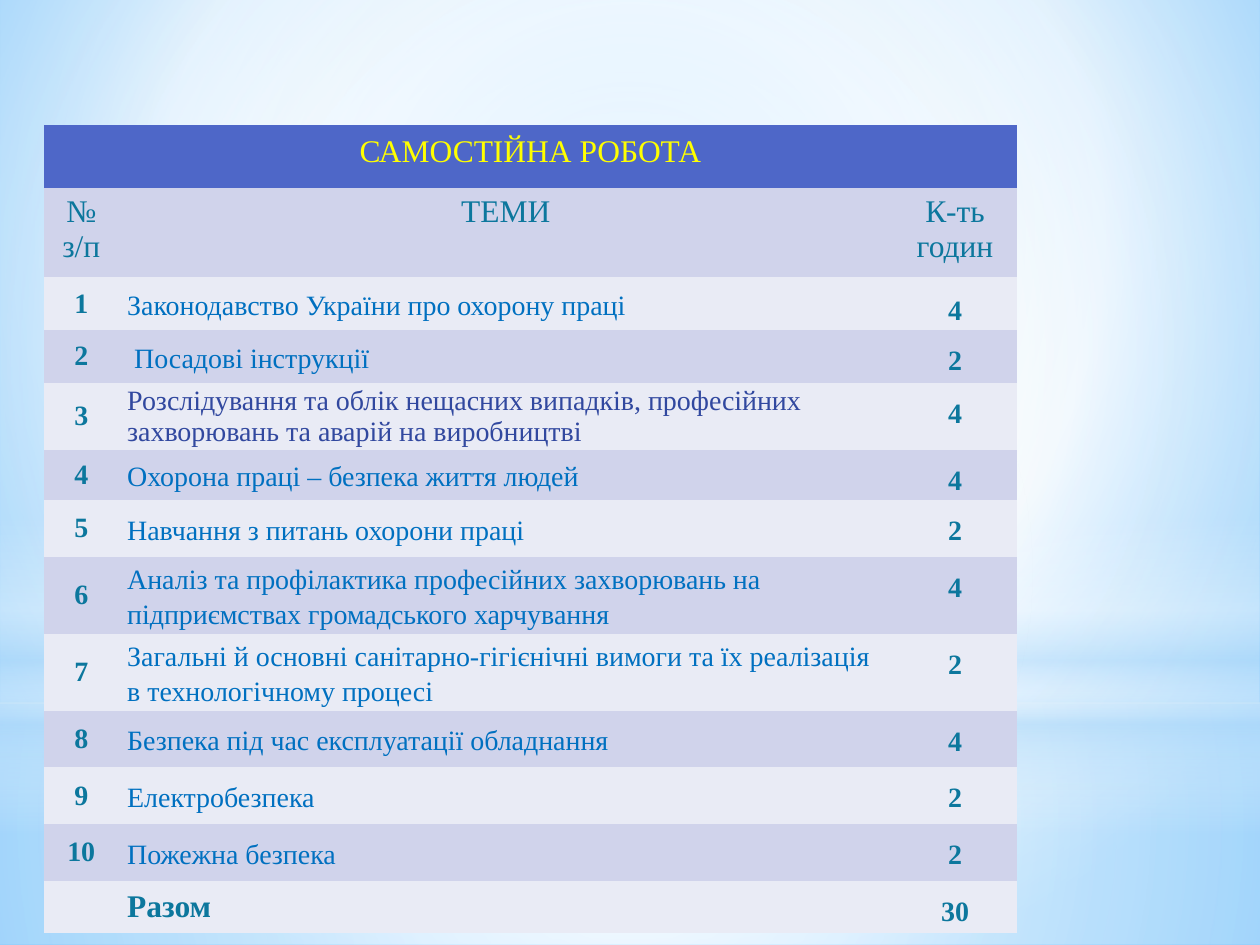
from lxml import etree
from pptx import Presentation
from pptx.dml.color import RGBColor
from pptx.enum.shapes import MSO_SHAPE
from pptx.enum.text import MSO_ANCHOR, PP_ALIGN
from pptx.oxml.ns import nsdecls, qn
from pptx.util import Inches, Pt

FONT = "Times New Roman"
TEAL, BLUE, INDIGO, YELLOW = "0C779D", "0070C0", "31489F", "FFFF00"
HEAD, DARK, LIGHT = "4E67C8", "D0D3EB", "E9EBF5"
WHITE, SKY = "FFFFFF", "B4DCFA"
NO_STYLE = "{2D5ABB26-0587-4C30-8999-92F81FD0307C}"
CENTRE = (50, 50, 50, 50)
COLS = (0.59, 6.15, 0.98)
ROWS = (0.5, 0.71, 0.42, 0.42, 0.53, 0.4, 0.45, 0.61, 0.61, 0.45, 0.45, 0.45, 0.42)
HEADS = ("№ з/п", "ТЕМИ", "К-ть годин")
TOPICS = (
    ("Законодавство України про охорону праці", 4),
    (" Посадові інструкції", 2),
    ("Розслідування та облік нещасних випадків, професійних "
     "захворювань та аварій на виробництві", 4),
    ("Охорона праці – безпека життя людей", 4),
    ("Навчання з питань охорони праці", 2),
    ("Аналіз та профілактика професійних захворювань на "
     "підприємствах громадського харчування", 4),
    ("Загальні й основні санітарно-гігієнічні вимоги та їх реалізація "
     "в технологічному процесі", 2),
    ("Безпека під час експлуатації обладнання", 4),
    ("Електробезпека", 2),
    ("Пожежна безпека", 2),
)
LONG_TOPIC = 3


def rgb(code):
    return RGBColor.from_string(code)


def blend(fill, owner, stops, focus=None):
    """Gradient of (position, colour, opacity) stops; round if focus is given."""
    fill.gradient()
    marks = "".join(
        f'<a:gs pos="{pos * 1000}"><a:srgbClr val="{code}">'
        f'<a:alpha val="{alpha * 1000}"/></a:srgbClr></a:gs>'
        for pos, code, alpha in stops)
    if focus:
        sides = " ".join(f'{side}="{part * 1000}"' for side, part in zip("ltrb", focus))
        kind = f'<a:path path="circle"><a:fillToRect {sides}/></a:path>'
    else:
        kind = '<a:lin ang="5400000" scaled="0"/>'
    new = etree.fromstring(
        f'<a:gradFill {nsdecls("a")} rotWithShape="1">'
        f'<a:gsLst>{marks}</a:gsLst>{kind}</a:gradFill>')
    old = owner.find(".//" + qn("a:gradFill"))
    old.getparent().replace(old, new)


def add_glow(slide, kind, top, height, stops, focus=None):
    shape = slide.shapes.add_shape(kind, 0, Inches(top), Inches(10), Inches(height))
    shape.shadow.inherit = False
    shape.line.fill.background()
    blend(shape.fill, shape._element, stops, focus)


def add_back(slide):
    blend(slide.background.fill, slide._element,
          [(0, "9ED5FF", 100), (60, WHITE, 100), (100, "5BB9FF", 100)],
          (20, 10, 20, 60))
    box, oval = MSO_SHAPE.RECTANGLE, MSO_SHAPE.OVAL
    add_glow(slide, box, 5.58, 1.92,
             [(0, WHITE, 91), (37, WHITE, 76), (100, SKY, 79)], CENTRE)
    add_glow(slide, box, 0, 5.58,
             [(0, WHITE, 89), (48, WHITE, 62), (100, SKY, 79)], CENTRE)
    add_glow(slide, box, 4.12, 2.5,
             [(0, WHITE, 0), (29, WHITE, 30), (45, SKY, 40),
              (55, WHITE, 26), (65, SKY, 60), (100, WHITE, 0)])
    add_glow(slide, oval, 1.75, 5.58, [(0, WHITE, 100), (56, WHITE, 0)], CENTRE)


def write(frame, text, size, color, bold=False, align=PP_ALIGN.CENTER,
          spacing=None, after=None):
    para = frame.paragraphs[0]
    para.alignment = align
    if spacing:
        para.line_spacing = spacing
    if after:
        para.space_after = Pt(after)
    run = para.add_run()
    run.text = text
    font = run.font
    font.name, font.size, font.bold = FONT, Pt(size), bold
    font.color.rgb = rgb(color)


def trim(cell):
    cell.margin_left = cell.margin_right = Inches(0.07)
    cell.margin_top = cell.margin_bottom = 0


def fill_topic(cell, text, size=16, color=BLUE, bold=False, spacing=1.15, after=10):
    trim(cell)
    cell.vertical_anchor = MSO_ANCHOR.MIDDLE
    write(cell.text_frame, text, size, color, bold, PP_ALIGN.LEFT, spacing, after)


def fill_hours(cell, hours, after=None):
    trim(cell)
    write(cell.text_frame, str(hours), 16, TEAL, True, spacing=1.5, after=after)


def add_grid(slide):
    frame = slide.shapes.add_table(len(ROWS), len(COLS), Inches(0.35), Inches(0.99),
                                   Inches(sum(COLS)), Inches(sum(ROWS)))
    table = frame.table
    table._tbl.tblPr.find(qn("a:tableStyleId")).text = NO_STYLE
    for col, width in zip(table.columns, COLS):
        col.width = Inches(width)
    for num, height in enumerate(ROWS):
        table.rows[num].height = Inches(height)
        for cell in table.rows[num].cells:
            cell.fill.solid()
            cell.fill.fore_color.rgb = rgb((DARK if num % 2 else LIGHT) if num else HEAD)
    table.cell(0, 0).merge(table.cell(0, 2))
    for col, text in enumerate(HEADS):
        write(table.cell(1, col).text_frame, text, 18, TEAL)

    for num, (topic, hours) in enumerate(TOPICS, 1):
        index, theme, total = table.rows[num + 1].cells
        index.vertical_anchor = MSO_ANCHOR.MIDDLE
        write(index.text_frame, str(num), 16, TEAL, True)
        if num == LONG_TOPIC:
            fill_topic(theme, topic, color=INDIGO, spacing=None, after=None)
        else:
            fill_topic(theme, topic)
        fill_hours(total, hours, 10 if num == 1 else None)
        if num == 1:
            total.vertical_anchor = MSO_ANCHOR.MIDDLE

    last = len(ROWS) - 1
    fill_topic(table.cell(last, 1), "Разом", 18, TEAL, True, None, None)
    fill_hours(table.cell(last, 2), sum(hours for _, hours in TOPICS))


def add_title(slide):
    box = slide.shapes.add_textbox(Inches(1.7), Inches(0.99), Inches(5.02), Inches(0.4))
    box.text_frame.word_wrap = True
    write(box.text_frame, "САМОСТІЙНА РОБОТА", 18, YELLOW)


def main():
    deck = Presentation()
    deck.slide_width, deck.slide_height = Inches(10), Inches(7.5)
    slide = deck.slides.add_slide(deck.slide_layouts[6])
    add_back(slide)
    add_grid(slide)
    add_title(slide)
    deck.save("out.pptx")


if __name__ == "__main__":
    main()
